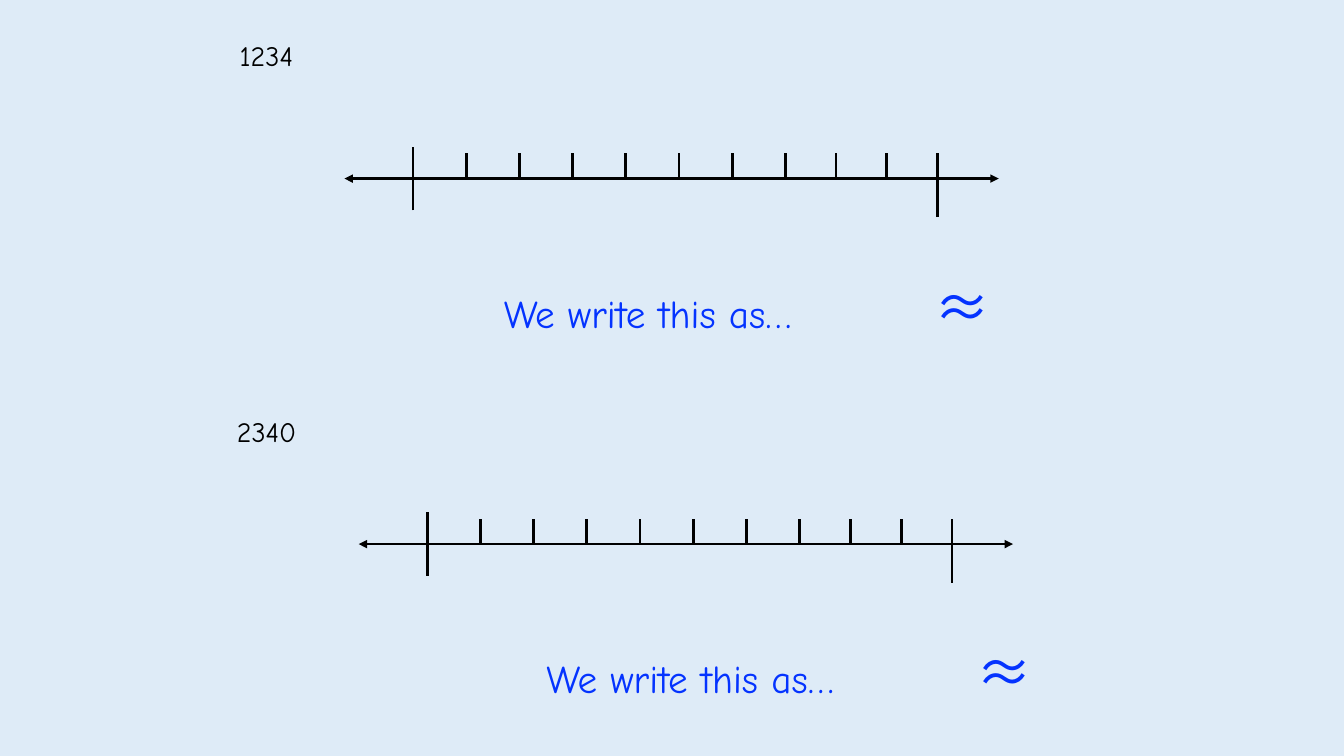
from dataclasses import dataclass

from lxml import etree
from pptx import Presentation
from pptx.dml.color import RGBColor
from pptx.enum.shapes import MSO_CONNECTOR
from pptx.enum.text import MSO_ANCHOR
from pptx.oxml.ns import qn
from pptx.util import Cm, Pt

STRAIGHT = MSO_CONNECTOR.STRAIGHT
MIDDLE = MSO_ANCHOR.MIDDLE

SKY, BLACK, BLUE = "DEEBF7", "000000", "0433FF"
HAND, SYMBOL = "Comic Neue", "Noto Sans CJK JP"
WIDE, NARROW = 1.34, 1.28  # gaps between ticks
TOP = -0.64  # upper end of a tick, from the axis
TAB = 10.85  # place of the sign in its text box


@dataclass
class Box:
    left: float
    top: float
    width: float
    height: float


@dataclass
class Task:
    number: str
    label: Box
    phrase: Box
    zero: tuple[float, float]  # where the first tick meets the axis


@dataclass
class Line:
    start: tuple[float, float]
    end: tuple[float, float]
    arrow: bool = False


TASKS = [
    Task("1234", Box(5.94, 0.86, 1.83, 1.07), Box(12.6, 6.76, 12.88, 1.9), (10.41, 4.5)),
    Task("2340", Box(5.87, 10.34, 1.96, 1.07), Box(13.67, 15.95, 12.88, 1.9), (10.77, 13.71)),
]

# Axis halves, long end ticks and short ticks, all measured from zero
SPOTS = [min(i, 7) * WIDE + max(i - 7, 0) * NARROW for i in range(11)]
LINES = [
    Line((-0.15, 0), (14.76, 0), True),
    Line((0.1, 0), (-1.73, 0), True),
    Line((0, 0.8), (0, -0.8)),
    *[Line((x, -0.03), (x, TOP)) for x in SPOTS[1:-1]],
    Line((SPOTS[-1], 0.97), (SPOTS[-1], TOP)),
]


def color(code: str) -> RGBColor:
    return RGBColor.from_string(code)


def draw_line(shapes, line: Line, zero: tuple[float, float]) -> None:
    x, y = zero
    link = shapes.add_connector(
        STRAIGHT,
        Cm(x + line.start[0]), Cm(y + line.start[1]),
        Cm(x + line.end[0]), Cm(y + line.end[1]),
    )
    link.line.color.rgb = color(BLACK)
    link.line.width = Pt(2)
    if line.arrow:
        etree.SubElement(link.line._get_or_add_ln(), qn("a:tailEnd"), type="triangle")
    etree.SubElement(link._element.spPr, qn("a:effectLst"))


def add_text(shapes, box: Box, text: str, wrap: bool):
    frame = shapes.add_textbox(
        Cm(box.left), Cm(box.top), Cm(box.width), Cm(box.height)
    ).text_frame
    frame.word_wrap = wrap
    frame.vertical_anchor = MIDDLE
    frame.margin_left = frame.margin_right = Cm(0.1)
    frame.margin_top = frame.margin_bottom = Cm(0.1)
    frame.text = text
    return frame.paragraphs[0]


def style(run, font: str, size: int, code: str) -> None:
    run.font.name = font
    run.font.size = Pt(size)
    run.font.color.rgb = color(code)
    etree.SubElement(run.font._element, qn("a:ea"), typeface=font)


def add_phrase(shapes, box: Box) -> None:
    para = add_text(shapes, box, "We write this as…\t", True)
    stops = etree.SubElement(para._p.get_or_add_pPr(), qn("a:tabLst"))
    etree.SubElement(stops, qn("a:tab"), pos=str(int(Cm(TAB))), algn="l")
    style(para.runs[0], HAND, 28, BLUE)
    sign = para.add_run()
    sign.text = "≈"
    style(sign, SYMBOL, 40, BLUE)


def draw_task(slide, task: Task) -> None:
    # Number line
    group = slide.shapes.add_group_shape()
    for line in LINES:
        draw_line(group.shapes, line, task.zero)

    # Number and phrase
    label = add_text(slide.shapes, task.label, task.number, False)
    style(label.runs[0], HAND, 20, BLACK)
    add_phrase(slide.shapes, task.phrase)


def main() -> None:
    deck = Presentation()
    deck.slide_width, deck.slide_height = Cm(33.87), Cm(19.05)
    slide = deck.slides.add_slide(deck.slide_layouts[6])
    slide.background.fill.solid()
    slide.background.fill.fore_color.rgb = color(SKY)
    for task in TASKS:
        draw_task(slide, task)
    deck.save("out.pptx")


if __name__ == "__main__":
    main()
